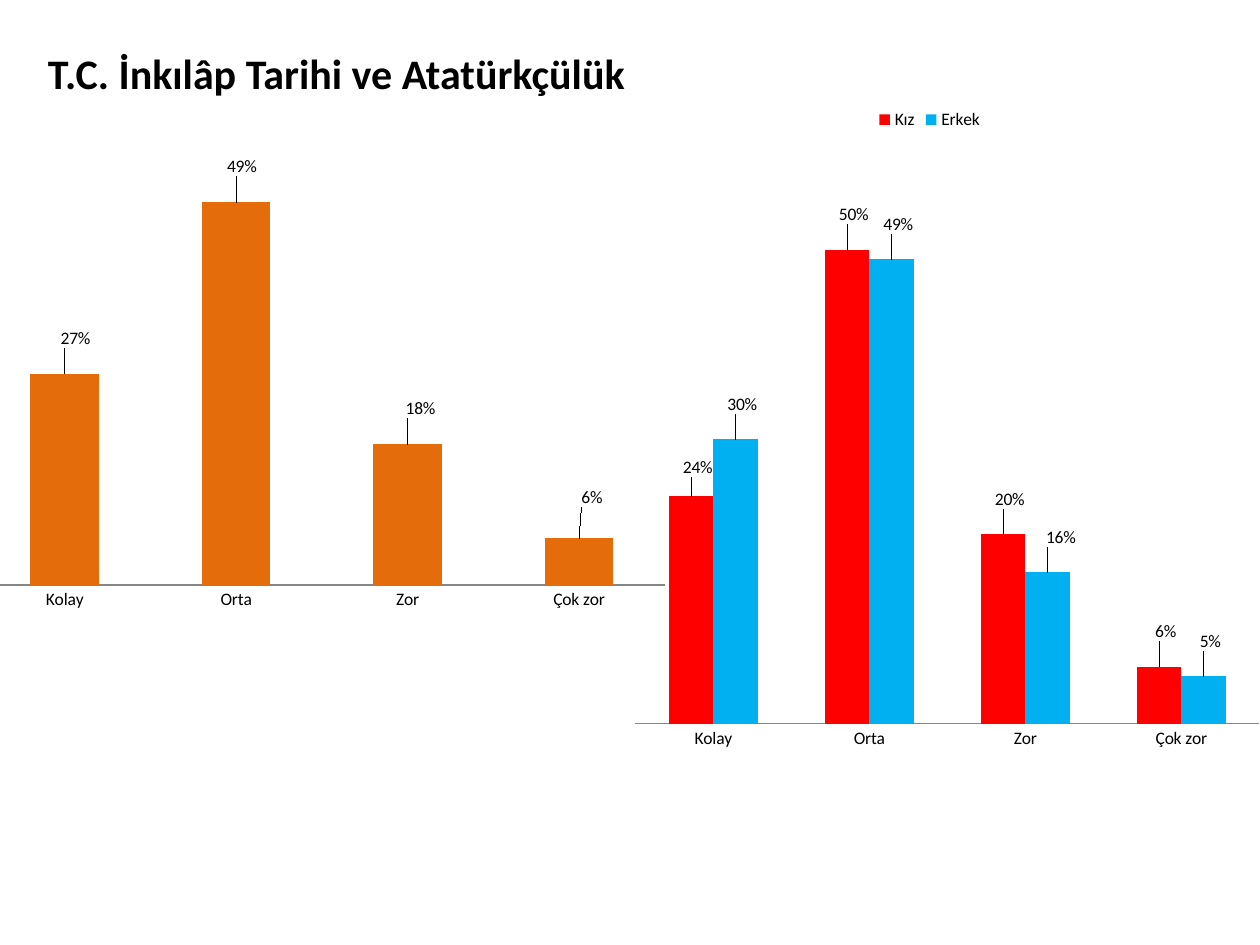
from lxml import etree
from pptx import Presentation
from pptx.chart.data import CategoryChartData
from pptx.dml.color import RGBColor
from pptx.enum.chart import XL_CHART_TYPE, XL_LABEL_POSITION, XL_LEGEND_POSITION, XL_TICK_LABEL_POSITION, XL_TICK_MARK
from pptx.enum.text import MSO_ANCHOR, PP_ALIGN
from pptx.oxml.ns import qn
from pptx.util import Inches, Pt

FONT = "Calibri"
BLACK = RGBColor(0x00, 0x00, 0x00)
GREY = RGBColor(0x86, 0x86, 0x86)
ORANGE = RGBColor(0xE4, 0x6C, 0x0A)
RED = RGBColor(0xFF, 0x00, 0x00)
BLUE = RGBColor(0x00, 0xB0, 0xF0)

DIFFICULTIES = ["Kolay", "Orta", "Zor", "Çok zor"]
OVERALL = [
    ("Series 1", ORANGE, [0.27, 0.49, 0.18, 0.06],
     [(0.015, -0.04), (0.008, -0.04), (0.018, -0.04), (0.018, -0.05)]),
]
BY_GENDER = [
    ("Kız", RED, [0.24, 0.5, 0.2, 0.06],
     [(0.01, -0.02), (0.01, -0.03), (0.01, -0.03), (0.01, -0.03)]),
    ("Erkek", BLUE, [0.3, 0.49, 0.16, 0.05],
     [(0.01, -0.03), (0.01, -0.03), (0.02, -0.03), (0.01, -0.03)]),
]


def add_layout(parent, index, **settings):
    """Put a manual chart layout into parent at the given child index."""
    for old in parent.findall(qn("c:layout")):
        parent.remove(old)
    layout = etree.Element(qn("c:layout"))
    manual = etree.SubElement(layout, qn("c:manualLayout"))
    for tag, value in settings.items():
        etree.SubElement(manual, qn(f"c:{tag}")).set("val", str(value))
    parent.insert(index, layout)


def add_heading(slide, left, top, width, height):
    """Place the lesson name in the title placeholder."""
    heading = slide.shapes.title
    heading.left, heading.top, heading.width, heading.height = left, top, width, height
    frame = heading.text_frame
    frame.text = "T.C. İnkılâp Tarihi ve Atatürkçülük"
    frame.vertical_anchor = MSO_ANCHOR.MIDDLE
    paragraph = frame.paragraphs[0]
    paragraph.alignment = PP_ALIGN.LEFT
    font = paragraph.runs[0].font
    font.name, font.size, font.bold = FONT, Pt(24), True
    font.color.rgb = BLACK


def style_axes(chart):
    """Hide the value axis and leave a plain category line."""
    values = chart.value_axis
    values.minimum_scale, values.maximum_scale = 0, 0.6
    values.has_major_gridlines = False
    values.visible = False
    categories = chart.category_axis
    categories.major_tick_mark = XL_TICK_MARK.NONE
    categories.tick_label_position = XL_TICK_LABEL_POSITION.NEXT_TO_AXIS
    categories.format.line.color.rgb = GREY
    categories.format.line.width = Pt(0.75)


def add_difficulty_chart(slide, left, top, width, height, groups, plot_box, legend=False):
    """Draw the difficulty shares of each group as columns."""
    shares = CategoryChartData(number_format="0%")
    shares.categories = DIFFICULTIES
    for name, _, values, _ in groups:
        shares.add_series(name, values)
    chart = slide.shapes.add_chart(
        XL_CHART_TYPE.COLUMN_CLUSTERED, left, top, width, height, shares).chart
    chart.has_title = False
    chart.font.name, chart.font.size = FONT, Pt(10)
    chart.font.color.rgb = BLACK
    style_axes(chart)
    chart.has_legend = legend
    if legend:
        chart.legend.position = XL_LEGEND_POSITION.TOP
        chart.legend.include_in_layout = False

    plot = chart.plots[0]
    plot.gap_width, plot.overlap, plot.vary_by_categories = 150, 0, False
    for series, (_, color, _, shifts) in zip(plot.series, groups):
        series.format.fill.solid()
        series.format.fill.fore_color.rgb = color
        labels = series.data_labels
        labels.show_value = True
        labels.number_format, labels.number_format_is_linked = "0%", False
        for index in range(len(shifts)):
            series.points[index].data_label.position = XL_LABEL_POSITION.OUTSIDE_END
        for label, (x, y) in zip(series._element.iter(qn("c:dLbl")), shifts):
            add_layout(label, 1, x=x, y=y)

    x, y, w, h = plot_box
    add_layout(chart._chartSpace.chart.plotArea, 0, layoutTarget="inner",
               xMode="edge", yMode="edge", x=x, y=y, w=w, h=h)


def main():
    """Build the slide and save it."""
    deck = Presentation()
    deck.slide_width, deck.slide_height = Inches(10), Inches(7.5)
    slide = deck.slides.add_slide(deck.slide_layouts[5])
    add_heading(slide, Inches(0.28), Inches(0.33), Inches(10), Inches(0.5))
    add_difficulty_chart(slide, Inches(-0.28), Inches(0.84), Inches(5.67), Inches(4.09),
                         OVERALL, (0.02, 0.02, 0.96, 0.91))
    add_difficulty_chart(slide, Inches(4.76), Inches(0.76), Inches(5.24), Inches(5.35),
                         BY_GENDER, (0.054, 0.088, 0.946, 0.844), legend=True)
    deck.save("out.pptx")


if __name__ == "__main__":
    main()
